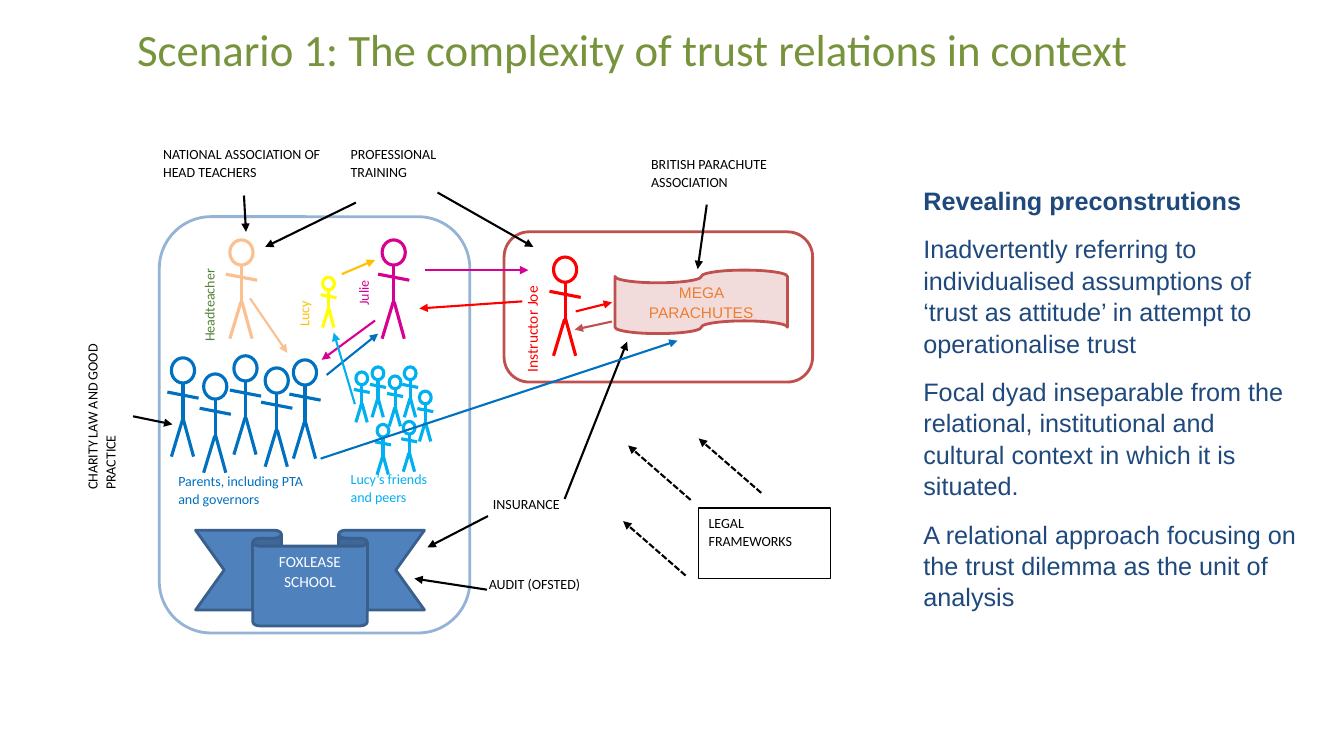
import pptx
import pptx.util
import pptx.dml.color
import pptx.enum.dml
import pptx.enum.shapes
import pptx.enum.text
import pptx.oxml.ns
from lxml import etree

SHAPE = pptx.enum.shapes.MSO_SHAPE
ALIGN = pptx.enum.text.PP_ALIGN
ANCHOR = pptx.enum.text.MSO_ANCHOR
CELL = pptx.util.Inches(0.1)  # grid of 133.3 columns by 75 rows

COLOURS = {
    "title": "77933C", "body": "1F497D", "black": "000000", "white": "FFFFFF",
    "school_frame": "95B3D7", "ribbon": "4F81BD", "ribbon_edge": "3A5F8C",
    "company": "C0504D", "tape": "F2DCDB", "tape_text": "ED7D31",
    "head": "FAC090", "head_text": "538135", "julie": "D60093",
    "friends": "00B0F0", "parents": "0070C0", "lucy": "FFFF00",
    "lucy_text": "FFC000", "joe": "FF0000",
}

# Column and row of each figure's head, colour
ADULTS = [
    (22.8, 23.8, "head"), (37.9, 23.8, "julie"), (54.9, 25.5, "joe"),
    (20.2, 37.1, "parents"), (23.2, 35.3, "parents"), (29.1, 35.7, "parents"),
    (26.3, 36.5, "parents"), (17, 35.5, "parents"),
]
CHILDREN = [
    (37.4, 42.1, "friends"), (41.6, 38.8, "friends"), (35.3, 36.9, "friends"),
    (36.9, 36.4, "friends"), (38.6, 37.3, "friends"), (40, 41.8, "friends"),
    (40.1, 36.4, "friends"), (32, 27.5, "lucy"),
]
CHILD_SCALE = 0.51
BODY_PARTS = [  # spine, right leg, left leg, arms, measured from the head's corner
    (1.15, 2.5, 1.15, 6.2), (1.2, 6.15, 2.2, 9.8),
    (1.1, 6.15, 0, 9.8), (-0.4, 3.4, 2.7, 4),
]

# Text, column, row, width, height, colour
LABELS = [
    ("Lucy’s friends and peers", 33.8, 46.1, 11.3, 6.8, "friends"),
    ("Parents, including PTA and governors", 16.7, 46.3, 15, 6.8, "parents"),
    ("NATIONAL ASSOCIATION OF HEAD TEACHERS", 15.2, 13.8, 19.4, 6.4, "black"),
    ("PROFESSIONAL TRAINING", 33.8, 13.8, 12.6, 6.4, "black"),
    ("BRITISH PARACHUTE ASSOCIATION", 63.6, 14.8, 15.9, 6.7, "black"),
    ("INSURANCE", 47.9, 48.6, 13.1, 4.4, "black"),
    ("AUDIT (OFSTED)", 47.5, 56.5, 13.1, 4.4, "black"),
]
UPRIGHT_LABELS = [  # as LABELS, then text size
    ("Headteacher", 19.3, 22.1, 4.3, 12.8, "head_text", 10),
    ("Julie", 34.6, 25.1, 4.3, 6.2, "julie", 10),
    ("Lucy", 28.7, 27.6, 4.3, 5.8, "lucy_text", 10),
    ("Instructor Joe", 51.2, 23, 4.3, 14.9, "joe", 11),
    ("CHARITY LAW AND GOOD PRACTICE", 7.7, 32.6, 6.7, 17, "black", 10),
]

# From column and row, to column and row, colour
ARROWS = [
    (42.2, 26.8, 52.4, 26.8, "julie"), (37.2, 31.8, 31.9, 35.7, "julie"),
    (24.8, 29.6, 28.5, 35, "head"), (32.4, 37.2, 37.5, 33.1, "parents"),
    (51.8, 29.9, 41.6, 30.6, "joe"), (57.1, 30.9, 60.7, 30, "joe"),
    (60.7, 31.9, 57, 32.7, "company"), (35.2, 40.1, 33.1, 33, "friends"),
    (33.9, 27.2, 37.2, 25.8, "lucy_text"), (24.2, 19.4, 24.4, 23, "black"),
    (35.3, 20.1, 26.3, 24.5, "black"), (43.4, 19.1, 52.9, 24.5, "black"),
    (70.1, 20.3, 69.2, 26.7, "black"), (13.2, 41.3, 17.1, 42.1, "black"),
    (48.4, 51.2, 42.4, 54.3, "black"), (56, 49.5, 62.2, 33.9, "black"),
    (48.3, 58.5, 41.1, 57.4, "black"), (31.8, 45.5, 67.2, 33.8, "parents"),
]
LEGAL_ARROW_STARTS = [(68.5, 49.6), (75.5, 48.9), (68, 57.1)]
LEGAL_ARROW_RUN = (-6.2, -5.4)

REVEALING = [
    "Revealing preconstrutions",
    "Inadvertently referring to individualised assumptions of ‘trust as attitude’ "
    "in attempt to operationalise trust",
    "Focal dyad inseparable from the relational, institutional and cultural context "
    "in which it is situated.",
    "A relational approach focusing on the trust dilemma as the unit of analysis",
]


def grid(*cells):
    return [round(cell * CELL) for cell in cells]


def colour(name):
    return pptx.dml.color.RGBColor.from_string(COLOURS[name])


def write(para, text, size, ink, font="Calibri", bold=False):
    span = para.add_run()
    span.text = text
    span.font.size = pptx.util.Pt(size)
    span.font.name = font
    span.font.bold = bold
    span.font.color.rgb = colour(ink)


def write_label(box, text, size, ink, font="Calibri", align=ALIGN.LEFT, anchor=ANCHOR.TOP):
    frame = box.text_frame
    frame.word_wrap = True
    frame.vertical_anchor = anchor
    para = frame.paragraphs[0]
    para.alignment = align
    para.line_spacing = 1.07
    para.space_after = pptx.util.Pt(8)
    write(para, text, size, ink, font)


def add_label(slide, text, column, row, width, height, ink, size=10):
    box = slide.shapes.add_textbox(*grid(column, row, width, height))
    write_label(box, text, size, ink)
    return box


def add_upright_label(slide, *label):
    """Add a label that reads from bottom to top."""
    box = add_label(slide, *label)
    box.text_frame._txBody.bodyPr.set("vert", "vert270")


def add_outline(slide, kind, place, edge, weight=2, fill=None):
    shape = slide.shapes.add_shape(kind, *grid(*place))
    shape.shadow.inherit = False
    if fill:
        shape.fill.solid()
        shape.fill.fore_color.rgb = colour(fill)
    else:
        shape.fill.background()
    shape.line.color.rgb = colour(edge)
    shape.line.width = pptx.util.Pt(weight)
    return shape


def add_line(slide, ends, ink, weight):
    line = slide.shapes.add_connector(
        pptx.enum.shapes.MSO_CONNECTOR.STRAIGHT, *grid(*ends))
    line.line.color.rgb = colour(ink)
    line.line.width = pptx.util.Pt(weight)
    etree.SubElement(line._element.spPr, pptx.oxml.ns.qn("a:effectLst"))
    return line


def add_arrow(slide, ends, ink, dashed=False):
    arrow = add_line(slide, ends, ink, 1.5)
    if dashed:
        arrow.line.dash_style = pptx.enum.dml.MSO_LINE.SQUARE_DOT
    tip = etree.SubElement(arrow.line._get_or_add_ln(), pptx.oxml.ns.qn("a:tailEnd"))
    tip.set("type", "triangle")


def add_figure(slide, column, row, ink, scale=1):
    """Draw a stick person whose head has its top left corner at column, row."""
    add_outline(slide, SHAPE.OVAL, (column, row, 2.3 * scale, 2.5 * scale), ink, 2.25)
    for x1, y1, x2, y2 in BODY_PARTS:
        ends = (column + x1 * scale, row + y1 * scale,
                column + x2 * scale, row + y2 * scale)
        add_line(slide, ends, ink, 2.25)


def add_title(slide):
    title = slide.shapes.title
    title.left, title.top, title.width, title.height = grid(12.6, 1.7, 104.1, 8.7)
    frame = title.text_frame
    frame.auto_size = pptx.enum.text.MSO_AUTO_SIZE.NONE
    frame.vertical_anchor = ANCHOR.TOP
    frame.paragraphs[0].alignment = ALIGN.LEFT
    write(frame.paragraphs[0], "Scenario 1: The complexity of trust relations in context",
          32, "title")


def add_commentary(slide):
    frame = slide.shapes.add_textbox(*grid(90.6, 17.8, 39.2, 42.4)).text_frame
    frame.word_wrap = True
    for number, text in enumerate(REVEALING):
        para = frame.add_paragraph() if number else frame.paragraphs[0]
        para.space_before = pptx.util.Pt(6 if number else 0)
        para.space_after = pptx.util.Pt(6)
        para.line_spacing = 1.04
        write(para, text, 18, "body", "Arial", bold=number == 0)


def add_organisations(slide):
    add_outline(slide, SHAPE.FLOWCHART_ALTERNATE_PROCESS, (15.8, 21.5, 30.8, 41.3),
                "school_frame")
    school = add_outline(slide, SHAPE.DOWN_RIBBON, (19.4, 52.6, 22.7, 9.5),
                         "ribbon_edge", fill="ribbon")
    write_label(school, "FOXLEASE SCHOOL", 11, "white", align=ALIGN.CENTER)
    company = add_outline(slide, SHAPE.FLOWCHART_PUNCHED_TAPE, (61, 26.8, 17.1, 6.3),
                          "company", fill="tape")
    write_label(company, "MEGA PARACHUTES", 11, "tape_text", "Arial",
                ALIGN.CENTER, ANCHOR.MIDDLE)
    add_outline(slide, SHAPE.FLOWCHART_ALTERNATE_PROCESS, (50, 23, 30.6, 14.9), "company")
    legal = add_outline(slide, SHAPE.RECTANGLE, (69.3, 50.4, 13.1, 7), "black", 0.75)
    write_label(legal, "LEGAL FRAMEWORKS", 10, "black")


def main():
    deck = pptx.Presentation()
    deck.slide_width, deck.slide_height = grid(133.3, 75)
    slide = deck.slides.add_slide(deck.slide_layouts[5])
    add_title(slide)
    add_organisations(slide)
    for adult in ADULTS:
        add_figure(slide, *adult)
    for child in CHILDREN:
        add_figure(slide, *child, CHILD_SCALE)
    for label in LABELS:
        add_label(slide, *label)
    for label in UPRIGHT_LABELS:
        add_upright_label(slide, *label)
    for *ends, ink in ARROWS:
        add_arrow(slide, ends, ink)
    for column, row in LEGAL_ARROW_STARTS:
        across, down = LEGAL_ARROW_RUN
        add_arrow(slide, (column, row, column + across, row + down), "black", dashed=True)
    add_commentary(slide)
    deck.save("out.pptx")


if __name__ == "__main__":
    main()
